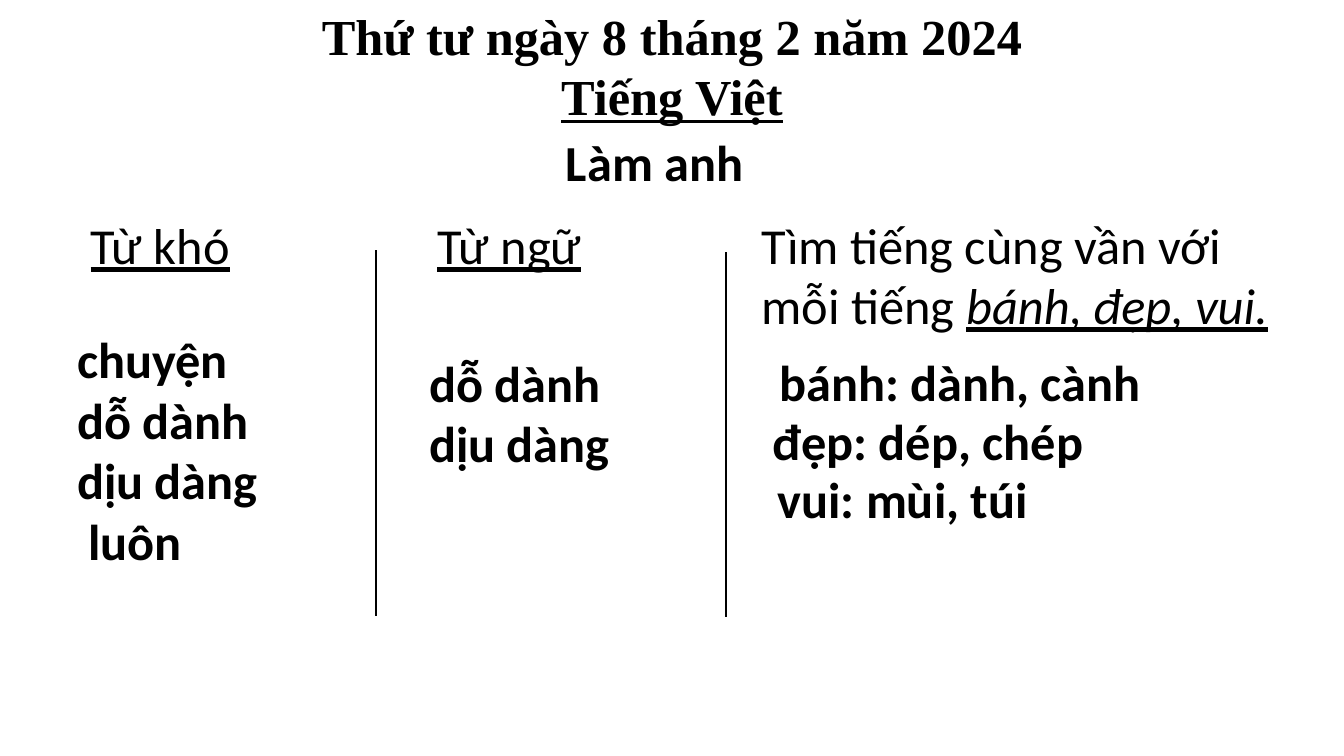
import pptx
import pptx.dml.color
import pptx.enum.shapes
import pptx.enum.text
import pptx.util
import lxml.etree

COLS, ROWS = 160, 90
LINE, PAD = 7.2, 1.2  # rows per line of text, rows of padding per box


def color(code):
    return pptx.dml.color.RGBColor.from_string(code)


class Board:
    """Holds the style and the current slide, measured in grid cells."""

    def __init__(self, deck):
        self.font, self.size, self.ink = "Calibri", 36, "000000"
        self.cell = pptx.util.Inches(7.5) / ROWS
        deck.slide_width = self.span(COLS)
        deck.slide_height = self.span(ROWS)
        self.slide = deck.slides.add_slide(deck.slide_layouts[6])

    def span(self, cells):
        return pptx.util.Emu(round(cells * self.cell))

    def style(self, run, bold=False, under=False, slant=False, font=None):
        face = run.font
        face.name, face.size = font or self.font, pptx.util.Pt(self.size)
        face.bold, face.underline, face.italic = bold, under, slant
        face.color.rgb = color(self.ink)

    def text(self, col, row, wide, *paras, lines=None, center=False, **look):
        """Each paragraph is a string or a list of (string, format) runs."""
        high = (lines or len(paras)) * LINE + PAD
        box = self.slide.shapes.add_textbox(*map(self.span, (col, row, wide, high)))
        frame = box.text_frame
        frame.word_wrap = True
        frame.auto_size = pptx.enum.text.MSO_AUTO_SIZE.SHAPE_TO_FIT_TEXT
        for spot, para in enumerate(paras):
            item = frame.add_paragraph() if spot else frame.paragraphs[0]
            if center:
                item.alignment = pptx.enum.text.PP_ALIGN.CENTER
            for words, extra in [(para, {})] if isinstance(para, str) else para:
                run = item.add_run()
                run.text = words
                self.style(run, **{**look, **extra})

    def rule(self, col, top, end):
        """Draw an upright dividing line."""
        line = self.slide.shapes.add_connector(
            pptx.enum.shapes.MSO_CONNECTOR.STRAIGHT,
            *map(self.span, (col, top, col, end)))
        line.line.color.rgb = color(self.ink)
        line.line.width = pptx.util.Pt(1.5)
        props = line._element.spPr
        lxml.etree.SubElement(props, pptx.oxml.ns.qn("a:effectLst"))


def main():
    deck = pptx.Presentation()
    board = Board(deck)

    board.text(20, 0, 120, "Thứ tư ngày 8 tháng 2 năm 2024",
               [("Tiếng Việt", {"under": True})],
               center=True, bold=True, font="Times New Roman")
    board.text(66.2, 15, 26, "Làm anh", bold=True)

    board.text(9.6, 24.85, 20, "Từ khó", under=True)
    board.text(8, 38.5, 25.3, "chuyện", "dỗ dành", "dịu dàng", " luôn", bold=True)
    board.rule(44.8, 29.8, 73.3)

    board.text(50.9, 24.95, 23.5, "Từ ngữ", under=True)
    board.text(49.9, 41.3, 25.3, "dỗ dành", "dịu dàng", bold=True)
    board.rule(86.4, 30, 73.4)

    board.text(89.5, 24.85, 64.6,
               [("Tìm tiếng cùng vần với mỗi tiếng ", {}),
                ("bánh, đẹp, vui.", {"slant": True, "under": True})], lines=2)
    for col, row, wide, rhyme in (
            (91.6, 41.2, 56, "bánh: dành, cành"),
            (90.8, 48.2, 44, "đẹp: dép, chép"),
            (91.4, 55.1, 37.7, "vui: mùi, túi")):
        board.text(col, row, wide, rhyme, bold=True)

    deck.save("out.pptx")


if __name__ == "__main__":
    main()
